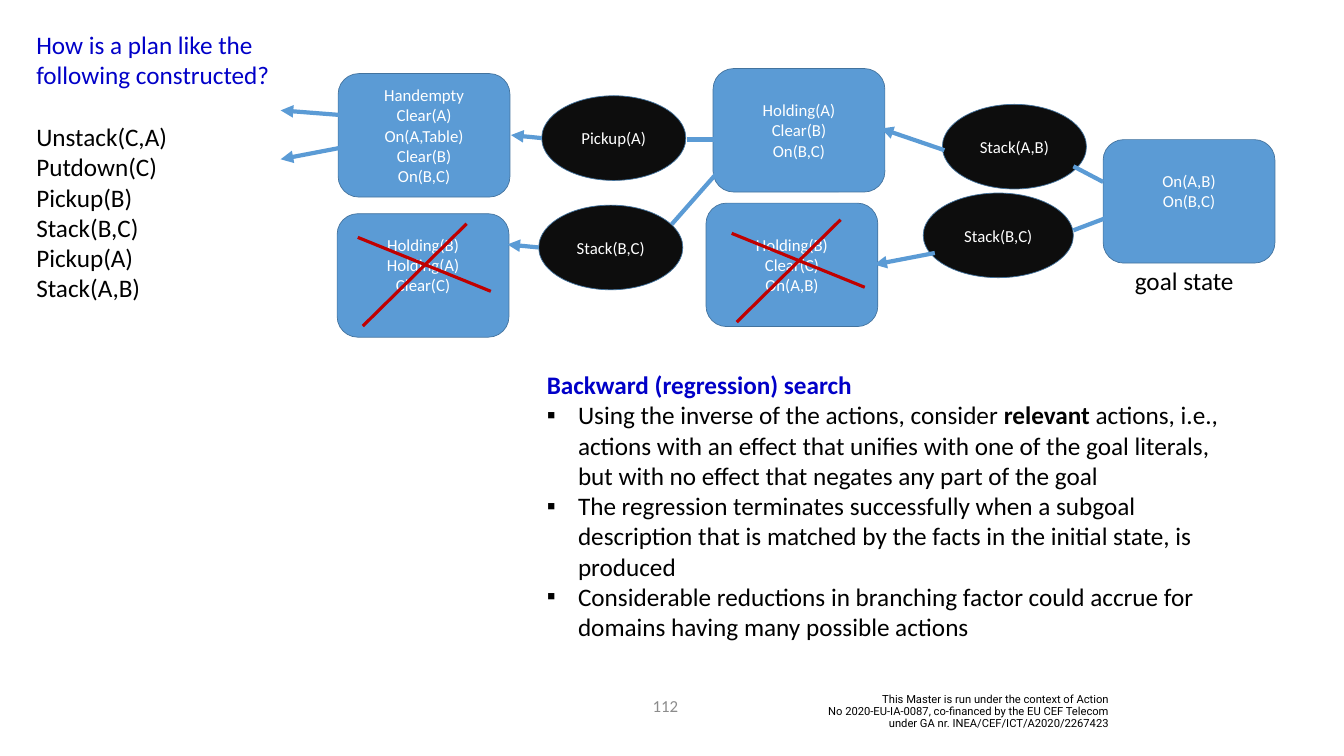
from dataclasses import dataclass

from lxml.etree import SubElement
from pptx import Presentation
from pptx.dml.color import RGBColor
from pptx.enum.shapes import MSO_CONNECTOR, MSO_SHAPE
from pptx.enum.text import MSO_ANCHOR, MSO_AUTO_SIZE, PP_ALIGN
from pptx.oxml.ns import qn
from pptx.util import Inches, Pt


@dataclass(frozen=True)
class Theme:
    """Colours, fonts and type sizes of the slide."""
    heading: str = "0100C8"
    text: str = "000000"
    light: str = "FFFFFF"
    muted: str = "8C8C8C"
    state: str = "5B9BD5"
    action: str = "0D0D0D"
    outline: str = "43739E"
    cross: str = "C00000"
    font: str = "Calibri"
    credit_font: str = "Roboto"
    body_size: int = 36
    label_size: int = 24
    credit_size: int = 16


THEME = Theme()
STATE_SIZE = (3.41, 2.45)
LABEL_LINE = 0.41

STATES = [
    (14.15, 1.36, ["Holding(A)", "Clear(B)", "On(B,C)"], 0),
    (21.89, 2.77, ["On(A,B)", "On(B,C)"], 1),
    (14.01, 4.03, ["Holding(B)", "Clear(C)", "On(A,B)"], 0),
    (6.71, 1.46, ["Handempty", "Clear(A)", "On(A,Table)", "Clear(B)", "On(B,C)"], 0),
    (6.69, 4.24, ["Holding(B)", "Holding(A)", "Clear(C)"], 1),
]
ACTIONS = [
    (18.7, 2.07, 2.86, "Stack(A,B)"),
    (18.32, 3.83, 2.98, "Stack(B,C)"),
    (10.75, 1.9, 2.86, "Pickup(A)"),
    (10.69, 4.07, 2.86, "Stack(B,C)"),
]
LINKS = [
    ((21.3, 3.3), (21.89, 3.61)),
    ((21.3, 4.57), (21.96, 4.32)),
    ((13.64, 2.77), (14.5, 2.77)),
    ((13.33, 4.45), (14.67, 2.93)),
]
ARROWS = [
    ((18.74, 2.98), (17.48, 2.55)),
    ((18.55, 5.02), (17.35, 5.25)),
    ((10.75, 2.74), (10.14, 2.68)),
    ((10.69, 4.91), (10.07, 4.85)),
    ((6.73, 2.28), (5.57, 2.19)),
    ((6.77, 2.93), (5.57, 3.16)),
]
CROSSES = [(7.1, 4.44), (14.52, 4.36)]
QUESTION = ["How is a plan like the", "following constructed?"]
PLAN = ["Unstack(C,A)", "Putdown(C)", "Pickup(B)", "Stack(B,C)", "Pickup(A)", "Stack(A,B)"]
SEARCH_HEADING = "Backward (regression) search"
SEARCH_POINTS = [
    [("Using the inverse of the actions, consider ", False), ("relevant", True),
     (" actions, i.e., actions with an effect that unifies with one of the goal literals, "
      "but with no effect that negates any part of the goal", False)],
    [("The regression terminates successfully when a subgoal description that is matched "
      "by the facts in the initial state, is produced", False)],
    [("Considerable reductions in branching factor could accrue for domains having many "
      "possible actions", False)],
]
CREDIT = ["This Master is run under the context of Action",
          "No 2020-EU-IA-0087, co-financed by the EU CEF Telecom",
          "under GA nr. INEA/CEF/ICT/A2020/2267423"]


def place(box, left, top, width, height):
    """Move and size a shape, in inches."""
    box.left, box.top = Inches(left), Inches(top)
    box.width, box.height = Inches(width), Inches(height)


def prepare_frame(box, anchor=MSO_ANCHOR.TOP):
    """Return the text frame, wrapped, unscaled and anchored."""
    frame = box.text_frame
    frame.word_wrap = True
    frame.auto_size = MSO_AUTO_SIZE.NONE
    frame.vertical_anchor = anchor
    return frame


def next_paragraph(frame, align=PP_ALIGN.LEFT, bullet=None):
    """Return a fresh paragraph, with a hanging bullet if one is given."""
    first = frame.paragraphs[0]
    para = frame.add_paragraph() if first.runs else first
    properties = para._p.get_or_add_pPr()
    indent = Inches(0.62) if bullet else 0
    properties.set("marL", str(indent))
    properties.set("indent", str(-indent))
    if bullet:
        SubElement(properties, qn("a:buChar"), char=bullet)
    else:
        SubElement(properties, qn("a:buNone"))
    para.alignment = align
    para.space_before = Pt(0)
    return para


def add_span(para, text, size, color, bold=False, font=THEME.font):
    """Add one formatted run."""
    span = para.add_run()
    span.text = text
    span.font.name, span.font.size, span.font.bold = font, Pt(size), bold
    span.font.color.rgb = RGBColor.from_string(color)


def add_lines(frame, lines, size, color, align=PP_ALIGN.LEFT):
    """Write each line as its own paragraph."""
    for line in lines:
        add_span(next_paragraph(frame, align), line, size, color)


def add_node(page, kind, bounds, fill, lines, raised_lines=0):
    """Draw a labelled node, its label lifted by half of each raised line."""
    node = page.shapes.add_shape(kind, *map(Inches, bounds))
    node.shadow.inherit = False
    node.fill.solid()
    node.fill.fore_color.rgb = RGBColor.from_string(fill)
    node.line.color.rgb = RGBColor.from_string(THEME.outline)
    node.line.width = Pt(1)
    frame = prepare_frame(node, MSO_ANCHOR.MIDDLE)
    frame.margin_bottom = Inches(0.05 + raised_lines * LABEL_LINE)
    add_lines(frame, lines, THEME.label_size, THEME.light, PP_ALIGN.CENTER)


def add_line(page, start, end, color=THEME.state, width=6, arrow=False):
    """Draw a straight line, with an arrowhead at its end if wanted."""
    line = page.shapes.add_connector(MSO_CONNECTOR.STRAIGHT, *map(Inches, start + end))
    line.line.color.rgb = RGBColor.from_string(color)
    line.line.width = Pt(width)
    if arrow:
        SubElement(line.line._get_or_add_ln(), qn("a:tailEnd"), type="triangle")
    SubElement(line._element.spPr, qn("a:effectLst"))


def add_cross(page, left, top):
    """Strike out a state with two diagonal lines."""
    strokes = [((left + 2.16, top), (left + 0.1, top + 2.03)),
               ((left + 2.64, top + 1.34), (left, top + 0.27))]
    for start, end in strokes:
        add_line(page, start, end, THEME.cross, 4.5)


def add_caption(page, bounds, text, size, color, align=PP_ALIGN.LEFT, anchor=MSO_ANCHOR.TOP):
    """Add a one-line text box."""
    box = page.shapes.add_textbox(*map(Inches, bounds))
    add_lines(prepare_frame(box, anchor), [text], size, color, align)


def add_credit(page):
    """Add the funding statement as one paragraph with line breaks."""
    box = page.shapes.add_textbox(*map(Inches, (15.02, 13.74, 7.08, 0.76)))
    para = next_paragraph(prepare_frame(box, MSO_ANCHOR.MIDDLE), PP_ALIGN.RIGHT)
    para.line_spacing = 0.9
    for number, line in enumerate(CREDIT):
        if number:
            para.add_line_break()
        add_span(para, line, THEME.credit_size, THEME.text, font=THEME.credit_font)


def fill_placeholders(page):
    """Write the question, the plan and the search notes."""
    question, plan, search = page.placeholders
    place(question, 0.62, 0.53, 4.92, 1.32)
    add_lines(prepare_frame(question), QUESTION, THEME.body_size, THEME.heading)
    place(plan, 0.62, 2.36, 4.92, 3.76)
    add_lines(prepare_frame(plan), PLAN, THEME.body_size, THEME.text)
    place(search, 10.75, 7.28, 13.77, 5.55)
    frame = prepare_frame(search)
    add_span(next_paragraph(frame), SEARCH_HEADING, THEME.body_size, THEME.heading, True)
    for point in SEARCH_POINTS:
        para = next_paragraph(frame, bullet="▪")
        for text, bold in point:
            add_span(para, text, THEME.body_size, THEME.text, bold)


def main():
    """Build and save the slide."""
    deck = Presentation()
    deck.slide_width, deck.slide_height = Inches(26.67), Inches(15)
    page = deck.slides.add_slide(deck.slide_layouts.get_by_name("Two Content"))
    fill_placeholders(page)
    for left, top, lines, raised in STATES:
        add_node(page, MSO_SHAPE.ROUNDED_RECTANGLE, (left, top, *STATE_SIZE),
                 THEME.state, lines, raised)
    for left, top, width, label in ACTIONS:
        add_node(page, MSO_SHAPE.OVAL, (left, top, width, 1.68), THEME.action, [label])
    for start, end in LINKS:
        add_line(page, start, end)
    for start, end in ARROWS:
        add_line(page, start, end, arrow=True)
    for left, top in CROSSES:
        add_cross(page, left, top)
    add_caption(page, (22.42, 5.22, 3.32, 0.71), "goal state", THEME.body_size, THEME.text)
    add_caption(page, (12.65, 13.61, 1.11, 0.8), "112", THEME.label_size, THEME.muted,
                PP_ALIGN.CENTER, MSO_ANCHOR.MIDDLE)
    add_credit(page)
    deck.save("out.pptx")


if __name__ == "__main__":
    main()
